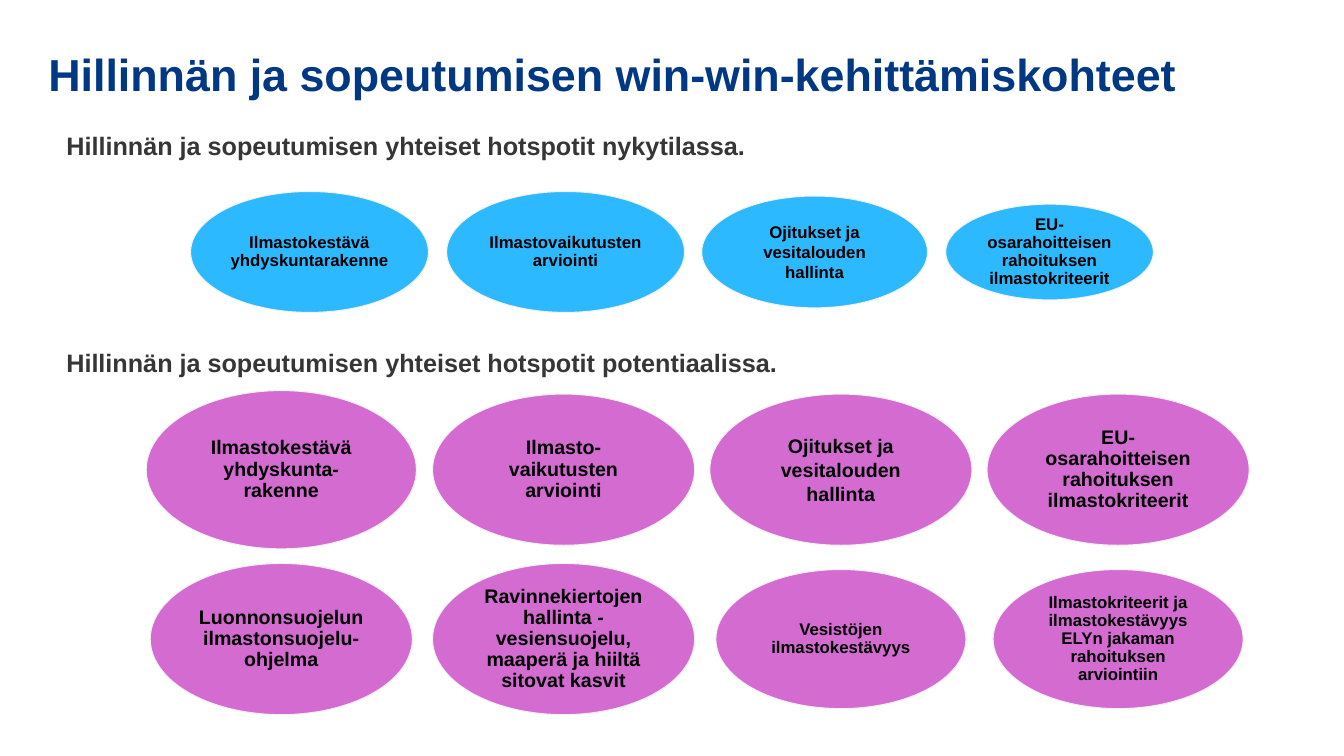
from pptx import Presentation
from pptx.dml.color import RGBColor
from pptx.enum import shapes, text
from pptx.util import Inches, Pt

NAVY = RGBColor(0x00, 0x38, 0x83)
GREY = RGBColor(0x36, 0x36, 0x36)
BLACK = RGBColor(0, 0, 0)
BLUE = RGBColor(0x2D, 0xB9, 0xFF)
ORCHID = RGBColor(0xD3, 0x6B, 0xD1)
PALE = RGBColor(0xF2, 0xF2, 0xF2)


def write(frame, wording, size, color, align=text.PP_ALIGN.LEFT,
          spacing=1.0, anchor=text.MSO_ANCHOR.TOP, inset=None):
    frame.word_wrap = True
    frame.auto_size = text.MSO_AUTO_SIZE.NONE
    frame.vertical_anchor = anchor
    if inset is not None:
        frame.margin_left = frame.margin_right = Inches(inset)
        frame.margin_top = frame.margin_bottom = Inches(inset)
    paragraph = frame.paragraphs[0]
    paragraph.alignment = align
    paragraph.line_spacing = spacing
    run = paragraph.add_run()
    run.text = wording
    run.font.name = "Arial"
    run.font.size = Pt(size)
    run.font.bold = True
    run.font.color.rgb = color


prs = Presentation()
prs.slide_width, prs.slide_height = Inches(13.33), Inches(7.5)
slide = prs.slides.add_slide(prs.slide_layouts[5])

title = slide.shapes.title
title.left, title.top = Inches(0.48), Inches(0.2)
title.width, title.height = Inches(12.3), Inches(1.12)
write(title.text_frame, "Hillinnän ja sopeutumisen win-win-kehittämiskohteet", 32, NAVY,
      spacing=0.9, anchor=text.MSO_ANCHOR.MIDDLE, inset=0)

headings = [
    ("Hillinnän ja sopeutumisen yhteiset hotspotit nykytilassa.", 1.24, 7.91),
    ("Hillinnän ja sopeutumisen yhteiset hotspotit potentiaalissa.", 3.4, 8.93),
]
for wording, top, width in headings:
    heading = slide.shapes.add_textbox(Inches(0.56), Inches(top), Inches(width), Inches(0.4))
    write(heading.text_frame, wording, 18, GREY)

current_centres = [3.07, 5.61, 8.08, 10.41]
potential_centres = [2.79, 5.59, 8.34, 11.09]
hotspot_rows = [
    (2.5, BLUE, current_centres, [
        ("Ilmastokestävä yhdyskuntarakenne", 2.36, 1.2, 12, 0.9),
        ("Ilmastovaikutusten arviointi", 2.36, 1.2, 12, 0.9),
        ("Ojitukset ja vesitalouden hallinta", 2.24, 1.11, 12, 1.0),
        ("EU-osarahoitteisen rahoituksen ilmastokriteerit", 2.06, 0.95, 12, 0.9),
    ]),
    (4.66, ORCHID, potential_centres, [
        ("Ilmastokestävä yhdyskunta-rakenne", 2.68, 1.57, 14, 0.9),
        ("Ilmasto-vaikutusten arviointi", 2.6, 1.5, 14, 0.9),
        ("Ojitukset ja vesitalouden hallinta", 2.6, 1.5, 14, 1.0),
        ("EU-osarahoitteisen rahoituksen ilmastokriteerit", 2.6, 1.5, 14, 0.9),
    ]),
    (6.34, ORCHID, potential_centres, [
        ("Luonnonsuojelun ilmastonsuojelu-ohjelma", 2.6, 1.5, 14, 0.9),
        ("Ravinnekiertojen hallinta - vesiensuojelu, maaperä ja hiiltä sitovat kasvit",
         2.6, 1.5, 14, 0.9),
        ("Vesistöjen ilmastokestävyys", 2.48, 1.38, 12, 0.9),
        ("Ilmastokriteerit ja ilmastokestävyys ELYn jakaman rahoituksen arviointiin",
         2.48, 1.38, 12, 0.9),
    ]),
]
for middle, fill, centres, hotspots in hotspot_rows:
    for centre, (wording, width, height, size, spacing) in zip(centres, hotspots):
        hotspot = slide.shapes.add_shape(
            shapes.MSO_SHAPE.OVAL, Inches(centre - width / 2), Inches(middle - height / 2),
            Inches(width), Inches(height))
        hotspot.shadow.inherit = False
        hotspot.fill.solid()
        hotspot.fill.fore_color.rgb = fill
        hotspot.line.color.rgb = PALE
        hotspot.line.width = Pt(0.75)
        write(hotspot.text_frame, wording, size, BLACK, align=text.PP_ALIGN.CENTER,
              spacing=spacing, anchor=text.MSO_ANCHOR.MIDDLE, inset=0.05)

prs.save("out.pptx")
